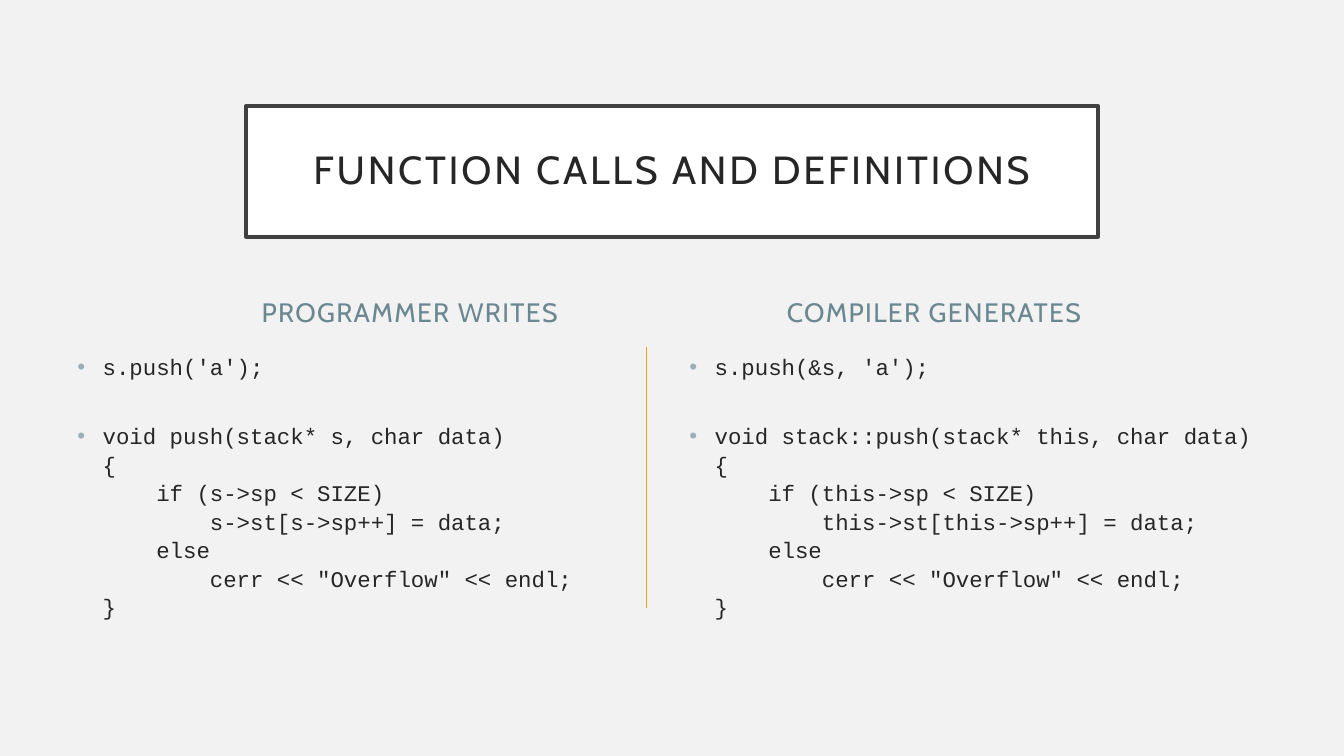
from lxml import etree
from pptx import Presentation
from pptx.dml.color import RGBColor
from pptx.enum.shapes import MSO_CONNECTOR as Link
from pptx.enum.text import MSO_ANCHOR as Anchor, MSO_AUTO_SIZE as Fit, PP_ALIGN as Align
from pptx.oxml.ns import qn
from pptx.util import Inches, Pt

PAPER = RGBColor(0xF2, 0xF2, 0xF2)
WHITE = RGBColor(0xFF, 0xFF, 0xFF)
FRAME = RGBColor(0x40, 0x40, 0x40)
INK = RGBColor(0x26, 0x26, 0x26)
TEAL = RGBColor(0x6B, 0x88, 0x91)
DOT = RGBColor(0x9B, 0xAF, 0xB5)
AMBER = RGBColor(0xF6, 0xA2, 0x1D)

HEAD = "Cabin"
MONO = "Courier New"

# Call, then definition, as the programmer and the compiler see them
WRITES = ("s.push('a');", "void push(stack* s, char data)", "s")
MAKES = ("s.push(&s, 'a');", "void stack::push(stack* this, char data)", "this")


def add_run(para, text, font, size, color, track=0):
    run = para.add_run()
    run.text = text
    run.font.name = font
    run.font.size = Pt(size)
    run.font.color.rgb = color
    run.font.bold = False
    if track:
        run._r.get_or_add_rPr().set("spc", str(track * 100))


def set_indent(para, bullet):
    props = para._p.get_or_add_pPr()
    props.set("marL", str(Inches(0.25)))
    props.set("indent", str(Inches(-0.25 if bullet else 0)))
    if bullet:
        tint = etree.SubElement(props, qn("a:buClr"))
        etree.SubElement(tint, qn("a:srgbClr")).set("val", str(DOT))
        etree.SubElement(props, qn("a:buFont")).set("typeface", "Arial")
        etree.SubElement(props, qn("a:buChar")).set("char", "•")


def add_box(slide, left, top, width, height):
    box = slide.shapes.add_textbox(Inches(left), Inches(top), Inches(width), Inches(height))
    box.text_frame.word_wrap = True
    return box.text_frame


def add_title(slide, text):
    title = slide.shapes.title
    title.left, title.top = Inches(2.44), Inches(1.05)
    title.width, title.height = Inches(8.45), Inches(1.3)
    title.fill.solid()
    title.fill.fore_color.rgb = WHITE
    title.line.color.rgb = FRAME
    title.line.width = Pt(2.5)
    frame = title.text_frame
    frame.auto_size = Fit.NONE
    frame.word_wrap = True
    frame.vertical_anchor = Anchor.MIDDLE
    frame.margin_left = frame.margin_right = Inches(0.2)
    frame.margin_top = frame.margin_bottom = Inches(0.2)
    para = frame.paragraphs[0]
    para.alignment = Align.CENTER
    para.line_spacing = 0.9
    add_run(para, text, HEAD, 28, INK, 2)


def add_head(slide, left, text):
    frame = add_box(slide, left, 2.53, 4.67, 0.77)
    frame.vertical_anchor = Anchor.BOTTOM
    para = frame.paragraphs[0]
    para.alignment = Align.CENTER
    add_run(para, text, HEAD, 19, TEAL, 1)


def add_code(slide, left, width, height, call, start, name):
    frame = add_box(slide, left, 3.44, width, height)
    body = [
        "{",
        f"    if ({name}->sp < SIZE)",
        f"        {name}->st[{name}->sp++] = data;",
        "    else",
        '        cerr << "Overflow" << endl;',
        "}",
    ]
    for row, text in enumerate([call, start] + body):
        para = frame.paragraphs[0] if row == 0 else frame.add_paragraph()
        para.line_spacing = 1.06
        para.space_before = Pt(29.2 if text == start else 0)
        set_indent(para, text in (call, start))
        add_run(para, text, MONO, 16, INK)


def add_rule(slide, left, top, end):
    rule = slide.shapes.add_connector(
        Link.STRAIGHT, Inches(left), Inches(top), Inches(left), Inches(end))
    rule.line.color.rgb = AMBER
    rule.line.width = Pt(0.5)
    etree.SubElement(rule._element.spPr, qn("a:effectLst"))


def main():
    deck = Presentation()
    deck.slide_width, deck.slide_height = Inches(13.33), Inches(7.5)
    slide = deck.slides.add_slide(deck.slide_layouts[5])
    slide.background.fill.solid()
    slide.background.fill.fore_color.rgb = PAPER

    # Title
    add_title(slide, "FUNCTION CALLS AND DEFINITIONS")

    # Left column
    add_head(slide, 1.73, "PROGRAMMER WRITES")
    add_code(slide, 0.67, 5.49, 2.84, *WRITES)

    # Right column
    add_head(slide, 6.93, "COMPILER GENERATES")
    add_code(slide, 6.74, 5.93, 3.33, *MAKES)

    # Divider
    add_rule(slide, 6.41, 3.44, 6.03)

    deck.save("out.pptx")


if __name__ == "__main__":
    main()
